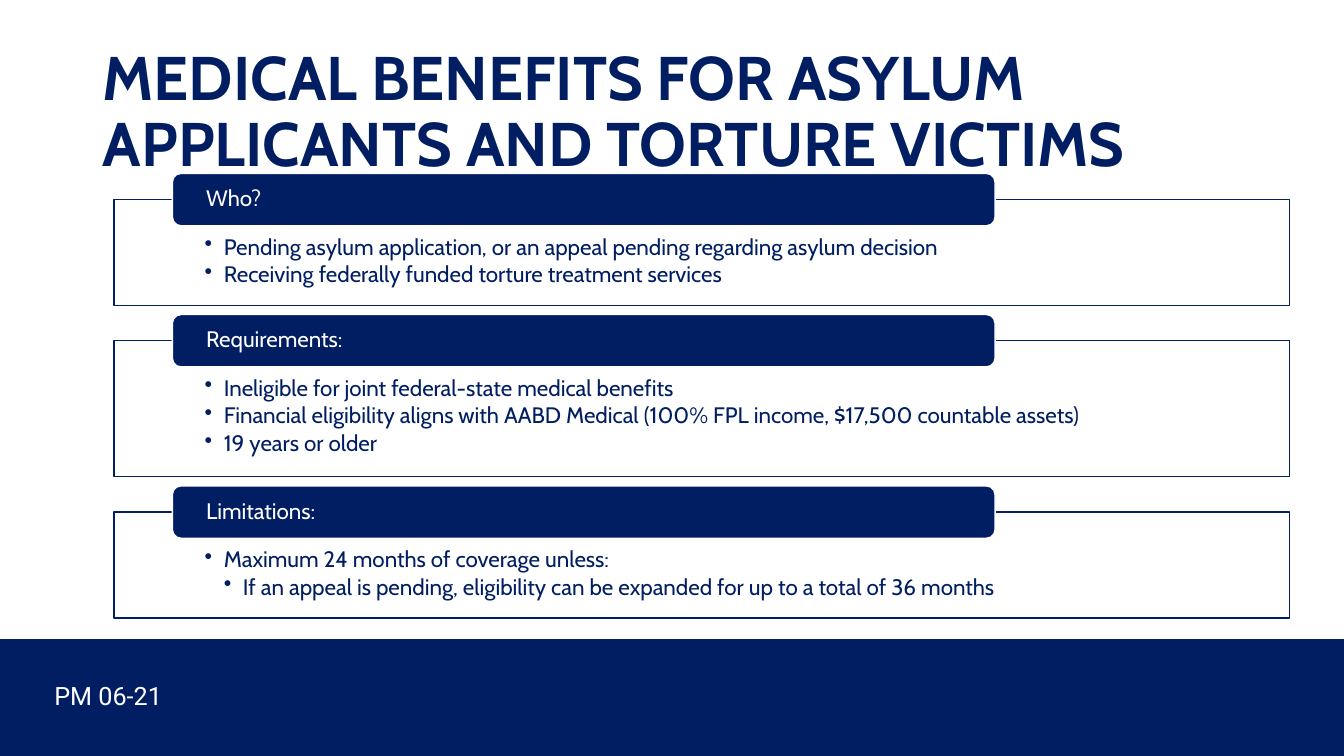
from dataclasses import dataclass

from lxml import etree
from pptx import Presentation
from pptx.dml.color import RGBColor
from pptx.enum import shapes, text
from pptx.oxml.ns import qn
from pptx.util import Inches, Pt

TITLE = "MEDICAL BENEFITS FOR ASYLUM APPLICANTS AND TORTURE VICTIMS"
REFERENCE = "PM 06-21"
SECTIONS = [
    ("Who?", [
        (1, "Pending asylum application, or an appeal pending regarding asylum decision"),
        (1, "Receiving federally funded torture treatment services"),
    ]),
    ("Requirements:", [
        (1, "Ineligible for joint federal-state medical benefits"),
        (1, "Financial eligibility aligns with AABD Medical (100% FPL income, $17,500 countable assets)"),
        (1, "19 years or older"),
    ]),
    ("Limitations:", [
        (1, "Maximum 24 months of coverage unless:"),
        (2, "If an appeal is pending, eligibility can be expanded for up to a total of 36 months"),
    ]),
]


@dataclass(frozen=True)
class Theme:
    navy: RGBColor = RGBColor(0x00, 0x1E, 0x61)
    white: RGBColor = RGBColor(0xFF, 0xFF, 0xFF)
    main_font: str = "Cabin"
    reference_font: str = "Roboto"
    title_size: int = 44
    reference_size: int = 18
    section_size: int = 16
    line_spacing: float = 0.9


THEME = Theme()
FRAME_LEFT, FRAME_TOP, FRAME_WIDTH = 1.13, 1.98, 11.66
FRAME_BASE, ITEM_HEIGHT, FRAME_GAP = 0.45, 0.3, 0.35
LABEL_LEFT, LABEL_WIDTH, LABEL_HEIGHT = 1.71, 8.16, 0.52
BULLET_INDENT = 0.19


def style_runs(paragraph, font_name, size, color, bold=False):
    for run in paragraph.runs:
        run.font.name = font_name
        run.font.size = Pt(size)
        run.font.color.rgb = color
        run.font.bold = bold


def add_block(slide, kind, box, fill, line=None):
    shape = slide.shapes.add_shape(kind, *map(Inches, box))
    shape.shadow.inherit = False
    shape.fill.solid()
    shape.fill.fore_color.rgb = fill
    if line is None:
        shape.line.fill.background()
    else:
        shape.line.color.rgb = line
        shape.line.width = Pt(1)
    return shape


def set_insets(frame, left, top, right, bottom):
    frame.margin_left, frame.margin_top = Inches(left), Inches(top)
    frame.margin_right, frame.margin_bottom = Inches(right), Inches(bottom)


def add_bullet(paragraph, level):
    paragraph.level = level
    properties = paragraph._p.get_or_add_pPr()
    properties.set("marL", str(Inches(BULLET_INDENT * level)))
    properties.set("indent", str(-Inches(BULLET_INDENT)))
    etree.SubElement(properties, qn("a:buChar")).set("char", "•")


def add_section(slide, heading, items, top, height):
    frame_shape = add_block(slide, shapes.MSO_SHAPE.RECTANGLE,
                            (FRAME_LEFT, top, FRAME_WIDTH, height), THEME.white, THEME.navy)
    fill_color = frame_shape._element.spPr.find(qn("a:solidFill"))[0]
    etree.SubElement(fill_color, qn("a:alpha")).set("val", "90000")
    frame = frame_shape.text_frame
    frame.word_wrap = True
    frame.vertical_anchor = text.MSO_ANCHOR.TOP
    set_insets(frame, 0.9, 0.36, 0.9, 0.12)
    frame.text = "\n".join(item for _, item in items)
    for paragraph, (level, _) in zip(frame.paragraphs, items):
        add_bullet(paragraph, level)
        paragraph.alignment = text.PP_ALIGN.LEFT
        paragraph.line_spacing = THEME.line_spacing
        paragraph.space_after = Pt(2.4)
        style_runs(paragraph, THEME.main_font, THEME.section_size, THEME.navy)

    label = add_block(slide, shapes.MSO_SHAPE.ROUNDED_RECTANGLE,
                      (LABEL_LEFT, top - LABEL_HEIGHT / 2, LABEL_WIDTH, LABEL_HEIGHT),
                      THEME.navy, THEME.white)
    label_frame = label.text_frame
    label_frame.word_wrap = True
    label_frame.vertical_anchor = text.MSO_ANCHOR.MIDDLE
    set_insets(label_frame, 0.31, 0, 0.31, 0)
    label_frame.text = heading
    paragraph = label_frame.paragraphs[0]
    paragraph.alignment = text.PP_ALIGN.LEFT
    paragraph.line_spacing = THEME.line_spacing
    style_runs(paragraph, THEME.main_font, THEME.section_size, THEME.white)


def add_title(slide):
    title = slide.shapes.title
    title.left, title.top, title.width, title.height = map(Inches, (0.92, 0.4, 11.5, 1.45))
    frame = title.text_frame
    frame.text = TITLE
    frame.word_wrap = True
    frame.auto_size = text.MSO_AUTO_SIZE.NONE
    frame.vertical_anchor = text.MSO_ANCHOR.MIDDLE
    paragraph = frame.paragraphs[0]
    paragraph.alignment = text.PP_ALIGN.LEFT
    paragraph.line_spacing = THEME.line_spacing
    style_runs(paragraph, THEME.main_font, THEME.title_size, THEME.navy, bold=True)


def add_footer(slide):
    add_block(slide, shapes.MSO_SHAPE.RECTANGLE, (0, 6.34, 13.33, 1.16), THEME.navy)
    reference = slide.shapes.add_textbox(*map(Inches, (0.44, 6.7, 6.67, 0.4)))
    frame = reference.text_frame
    frame.word_wrap = True
    frame.text = REFERENCE
    style_runs(frame.paragraphs[0], THEME.reference_font, THEME.reference_size, THEME.white)


def main():
    presentation = Presentation()
    presentation.slide_width, presentation.slide_height = Inches(13.33), Inches(7.5)
    slide = presentation.slides.add_slide(presentation.slide_layouts[5])
    add_title(slide)
    add_footer(slide)
    top = FRAME_TOP
    for heading, items in SECTIONS:
        height = FRAME_BASE + ITEM_HEIGHT * len(items)
        add_section(slide, heading, items, top, height)
        top += height + FRAME_GAP
    presentation.save("out.pptx")


if __name__ == "__main__":
    main()
